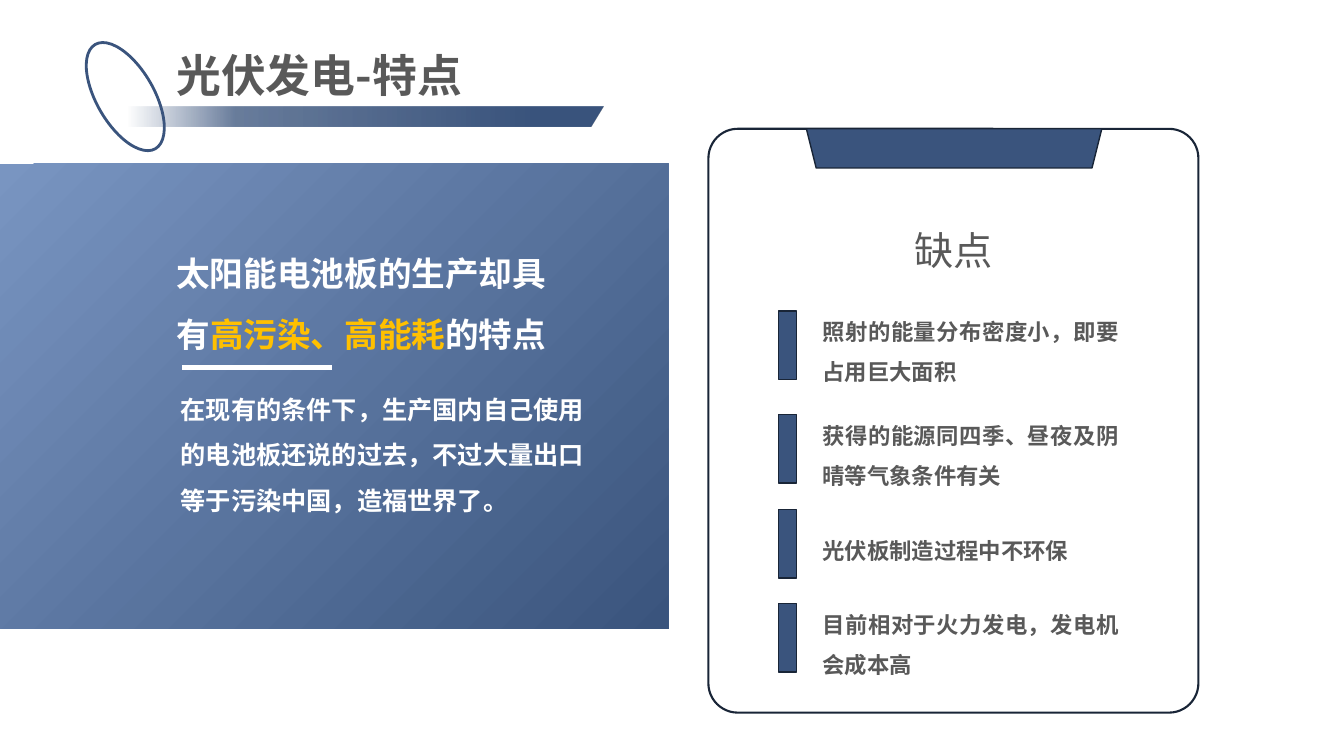
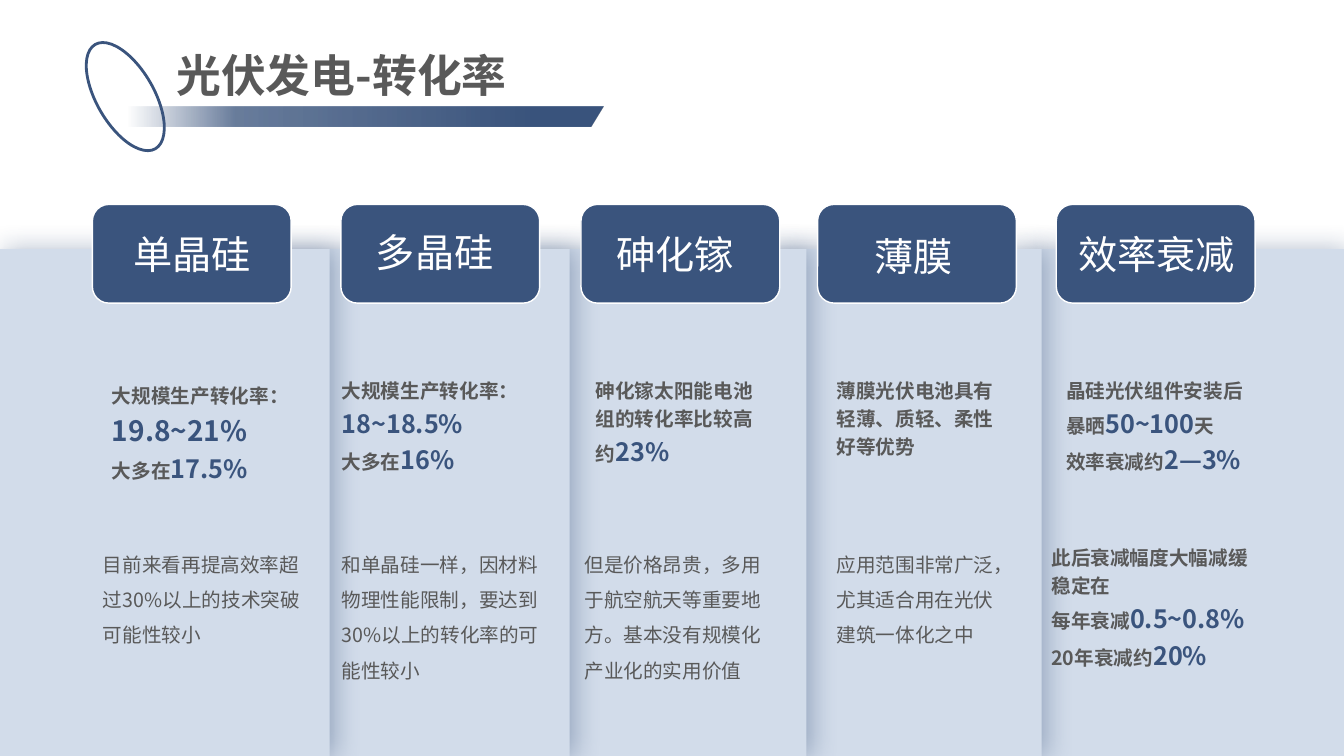
import pptx
import pptx.dml.color
import pptx.enum.lang
import pptx.enum.shapes
import pptx.enum.text
import pptx.oxml
import pptx.oxml.ns
import pptx.util
from lxml import etree

Pt = pptx.util.Pt
RGB = pptx.dml.color.RGBColor
SHAPE = pptx.enum.shapes.MSO_SHAPE
ALIGN = pptx.enum.text.PP_ALIGN
ANCHOR = pptx.enum.text.MSO_ANCHOR
qn = pptx.oxml.ns.qn

BLUE = RGB(0x3A, 0x54, 0x7D)
LIGHT_BLUE = RGB(0x79, 0x95, 0xC1)
PALE_BLUE = RGB(0xD2, 0xDC, 0xEA)
NAVY = RGB(0x19, 0x25, 0x37)
GREY = RGB(0x59, 0x59, 0x59)
GOLD = RGB(0xFF, 0xC0, 0x00)
WHITE = RGB(0xFF, 0xFF, 0xFF)

HEAD_FONT = "Noto Sans CJK JP"
BODY_FONT = "Noto Sans CJK SC"
WIDTH, HEIGHT = 960, 540


def write(slide, text, box, size=14, color=GREY, bold=False, font=BODY_FONT,
          align=ALIGN.LEFT, anchor=ANCHOR.TOP, spacing=1.0):
    """Text is a string or a list of paragraphs; a paragraph is a string
    or a list of (text, size, color) runs."""
    frame = slide.shapes.add_textbox(*map(Pt, box)).text_frame
    frame.word_wrap = True
    frame.vertical_anchor = anchor
    frame.margin_left = frame.margin_right = 0
    frame.margin_top = frame.margin_bottom = 0
    for i, content in enumerate([text] if isinstance(text, str) else text):
        paragraph = frame.paragraphs[0] if i == 0 else frame.add_paragraph()
        paragraph.alignment = align
        paragraph.line_spacing = spacing
        runs = [(content, size, color)] if isinstance(content, str) else content
        for words, run_size, run_color in runs:
            run = paragraph.add_run()
            run.text = words
            run.font.size = Pt(run_size)
            run.font.bold = bold
            run.font.color.rgb = run_color
            run.font.name = font
            run.font.language_id = pptx.enum.lang.MSO_LANGUAGE_ID.SIMPLIFIED_CHINESE
            etree.SubElement(run.font._element, qn("a:ea"), typeface=font)


def draw(slide, kind, box, fill=None, line=None, line_width=1.0):
    shape = slide.shapes.add_shape(kind, *map(Pt, box))
    shape.shadow.inherit = False
    if fill is None:
        shape.fill.background()
    else:
        shape.fill.solid()
        shape.fill.fore_color.rgb = fill
    if line is None:
        shape.line.fill.background()
    else:
        shape.line.color.rgb = line
        shape.line.width = Pt(line_width)
    return shape


def add_color(parent, color, opacity=100):
    node = etree.SubElement(parent, qn("a:srgbClr"), val=str(color))
    etree.SubElement(node, qn("a:alpha"), val=str(opacity * 1000))


def set_gradient(shape, stops, angle):
    """Stops are (position, color, opacity), all in percent."""
    properties = shape._element.spPr
    gradient = pptx.oxml.parse_xml(
        f'<a:gradFill {pptx.oxml.ns.nsdecls("a")} rotWithShape="1"><a:gsLst/>'
        f'<a:lin ang="{angle * 60000}" scaled="0"/></a:gradFill>')
    for position, color, opacity in stops:
        stop = etree.SubElement(gradient[0], qn("a:gs"), pos=str(position * 1000))
        add_color(stop, color, opacity)
    properties.replace(properties.find(qn("a:noFill")), gradient)


def set_shadow(shape, color, opacity, blur, distance):
    effects = shape._element.spPr.find(qn("a:effectLst"))
    shadow = etree.SubElement(effects, qn("a:outerShdw"), blurRad=str(Pt(blur)),
                              dist=str(Pt(distance)), dir="0", algn="l",
                              rotWithShape="0")
    add_color(shadow, color, opacity)


def add_title(slide, text):
    write(slide, text, (126, 34, 416, 42), size=32, bold=True, font=HEAD_FONT)
    bar = draw(slide, SHAPE.PARALLELOGRAM, (66, 76, 365, 14.3))
    bar.adjustments[0] = 0.64
    set_gradient(bar, [(7, BLUE, 0), (28, BLUE, 76), (87, BLUE, 100)], 0)
    ring = draw(slide, SHAPE.OVAL, (69, 26, 41, 86), line=BLUE, line_width=2)
    ring.rotation = 330


def add_rule(slide, left, right, y):
    rule = slide.shapes.add_connector(pptx.enum.shapes.MSO_CONNECTOR.STRAIGHT,
                                      Pt(left), Pt(y), Pt(right), Pt(y))
    rule.line.color.rgb = WHITE
    rule.line.width = Pt(3.75)
    etree.SubElement(rule._element.spPr, qn("a:effectLst"))


def add_drawback(slide, top, text):
    write(slide, text, (587.5, top - 7, 212, 63), size=16, bold=True,
          align=ALIGN.JUSTIFY, anchor=ANCHOR.MIDDLE, spacing=1.5)
    draw(slide, SHAPE.RECTANGLE, (556, top, 13, 49), fill=BLUE, line=NAVY)


def add_tab(slide, left, label, shift):
    top, width, height = 146, 142, 70.5
    draw(slide, SHAPE.ROUNDED_RECTANGLE, (left, top, width, height),
         fill=BLUE, line=WHITE)
    dx, dy = shift
    write(slide, label, (left + dx - 12, top + dy, width + 24, height), size=28,
          color=WHITE, font=HEAD_FONT, align=ALIGN.CENTER, anchor=ANCHOR.MIDDLE)


def plain(text):
    return text, 14, GREY


def figure(text, size=18):
    return text, size, BLUE


def build_features(slide):
    # Clipboard card
    card = draw(slide, SHAPE.ROUNDED_RECTANGLE, (506, 92, 350, 417),
                fill=WHITE, line=NAVY, line_width=1.5)
    card.adjustments[0] = 0.06
    clip = draw(slide, SHAPE.TRAPEZOID, (576, 92, 211, 28), fill=BLUE, line=NAVY)
    clip.rotation = 180

    # Statement panel
    panel = draw(slide, SHAPE.RECTANGLE, (0, 117, 477.5, 332))
    set_gradient(panel, [(0, LIGHT_BLUE, 100), (100, BLUE, 100)], 45)
    write(slide, "在现有的条件下，生产国内自己使用的电池板还说的过去，不过大量出口等于污染中国，造福世界了。",
          (129, 270.7, 300, 95), size=18, color=WHITE, bold=True, spacing=1.5)
    write(slide, [[("太阳能电池板的生产却具有", 24, WHITE),
                   ("高污染、高能耗", 24, GOLD), ("的特点", 24, WHITE)]],
          (126, 166.3, 270, 83), bold=True, spacing=1.5)
    add_rule(slide, 130, 237, 262.5)
    add_title(slide, "光伏发电-特点")

    # Drawbacks
    write(slide, "缺点", (631, 161.3, 100, 34), size=28, font=HEAD_FONT,
          align=ALIGN.CENTER)
    drawbacks = [(222, "照射的能量分布密度小，即要占用巨大面积"),
                 (296, "获得的能源同四季、昼夜及阴晴等气象条件有关"),
                 (364, "光伏板制造过程中不环保"),
                 (431, "目前相对于火力发电，发电机会成本高")]
    for top, text in drawbacks:
        add_drawback(slide, top, text)


def build_conversion(slide):
    # Column panels overlap, so the rightmost goes to the back
    right_edges = [235.5, 407, 576, 744, WIDTH]
    for i, right in reversed(list(enumerate(right_edges))):
        left = i * 183.3
        column = draw(slide, SHAPE.RECTANGLE, (left, 178, right - left, HEIGHT - 178),
                      fill=PALE_BLUE)
        set_shadow(column, BLUE, 40, 19, 3)

    # Column heads: left, label, label shift
    tabs = [(66, "单晶硅", (0, 0)), (243.5, "多晶硅", (-4, -1.5)),
            (415, "砷化镓", (-4, 0)), (584, "薄膜", (-2.5, 1.5)),
            (754.5, "效率衰减", (0.5, 0))]
    for tab in tabs:
        add_tab(slide, *tab)
    add_title(slide, "光伏发电-转化率")

    # Key facts: left, top, width, paragraphs
    facts = [
        (80, 270.7, 128, ["大规模生产转化率：", [figure("19.8~21%", 20)],
                          [plain("大多在"), figure("17.5%")]]),
        (244, 267, 142, ["大规模生产转化率：", [figure("18~18.5%")],
                         [plain("大多在"), figure("16%")]]),
        (425.5, 267, 118, ["砷化镓太阳能电池组的转化率比较高",
                           [plain("约"), figure("23%")]]),
        (597.5, 267, 118, ["薄膜光伏电池具有轻薄、质轻、柔性好等优势"]),
        (761.5, 267, 155, ["晶硅光伏组件安装后",
                           [plain("暴晒"), figure("50~100"), plain("天")],
                           [plain("效率衰减约"), figure("2—3%")]]),
        (751, 386.5, 145, ["此后衰减幅度大幅减缓稳定在",
                           [plain("每年衰减"), figure("0.5~0.8%")],
                           [plain("20年衰减约"), figure("20%")]]),
    ]
    for left, top, width, paragraphs in facts:
        write(slide, paragraphs, (left, top, width, 75), bold=True, spacing=1.2)

    # Outlook notes: left, width, text
    notes = [(73.5, 143, "目前来看再提高效率超过30%以上的技术突破可能性较小"),
             (244, 142, "和单晶硅一样，因材料物理性能限制，要达到30%以上的转化率的可能性较小"),
             (417.5, 138, "但是价格昂贵，多用于航空航天等重要地方。基本没有规模化产业化的实用价值"),
             (597.5, 118, "应用范围非常广泛，尤其适合用在光伏建筑一体化之中")]
    for left, width, text in notes:
        write(slide, text, (left, 386.5, width, 100), spacing=1.5)


def main():
    deck = pptx.Presentation()
    deck.slide_width, deck.slide_height = Pt(WIDTH), Pt(HEIGHT)
    for build in (build_features, build_conversion):
        build(deck.slides.add_slide(deck.slide_layouts[6]))
    deck.save("out.pptx")


if __name__ == "__main__":
    main()
